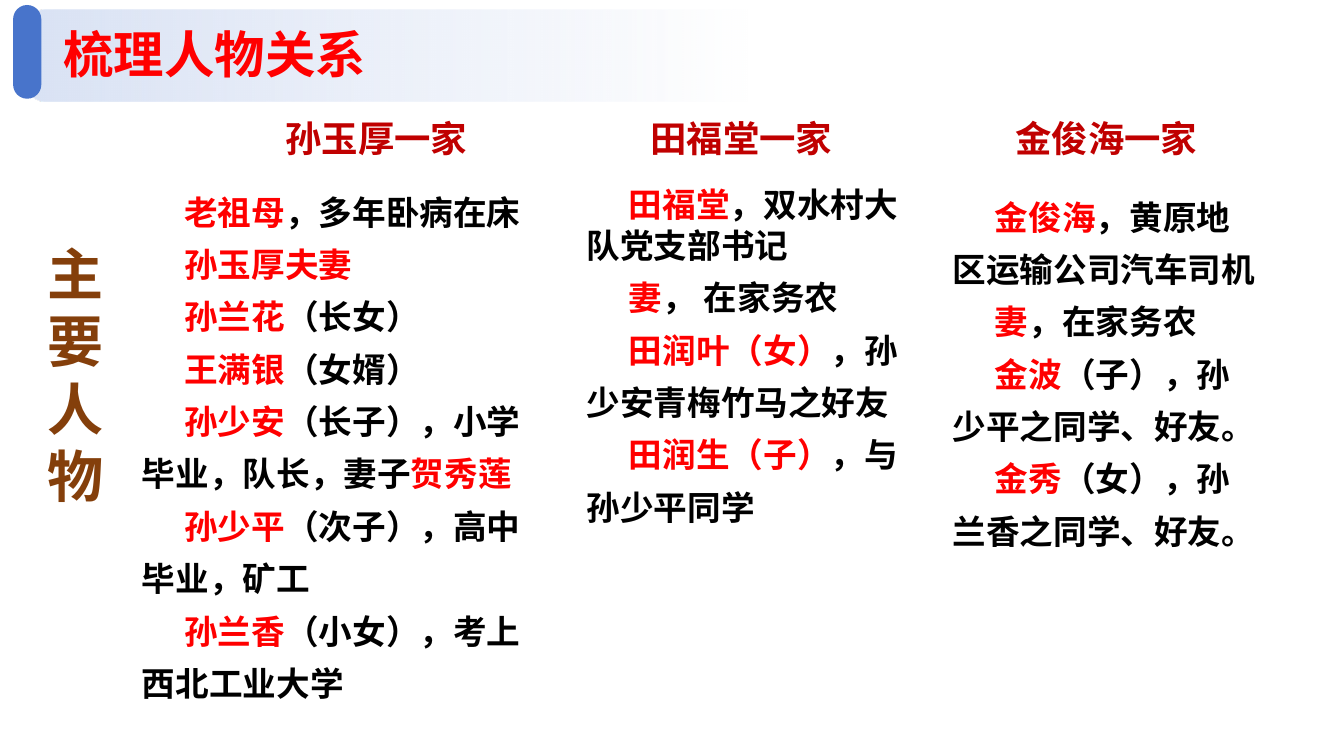
import pptx
import pptx.util
import pptx.dml.color
import pptx.enum.shapes
import pptx.enum.text
import pptx.oxml.ns
import lxml.etree

Inches = pptx.util.Inches
FONT = "Noto Sans CJK SC"
RED, BLACK = "FF0000", "000000"


def paint(color_format, value):
    color_format.rgb = pptx.dml.color.RGBColor.from_string(value)


def add_run(p, text, size=24, color=BLACK):
    r = p.add_run()
    r.text = text
    r.font.size = pptx.util.Pt(size)
    r.font.bold = True
    r.font.name = FONT
    paint(r.font.fill.fore_color if r.font.fill.solid() else r.font.color, color)
    ea = lxml.etree.SubElement(r.font._element, pptx.oxml.ns.qn("a:ea"))
    ea.set("typeface", FONT)


prs = pptx.Presentation()
prs.slide_width = Inches(13.33)
prs.slide_height = Inches(7.5)
slide = prs.slides.add_slide(prs.slide_layouts[6])
shapes = slide.shapes
SHAPE = pptx.enum.shapes.MSO_SHAPE

families = [
    ("孙玉厚一家", (1.31, 1.73, 4.09, 5.35), 1.3, [
        ["老祖母", "，多年卧病在床"],
        ["孙玉厚夫妻"],
        ["孙兰花", "（长女）"],
        ["王满银", "（女婿）"],
        ["孙少安", "（长子），小学毕业，队长，妻子", "贺秀莲"],
        ["孙少平", "（次子），高中毕业，矿工"],
        ["孙兰香", "（小女），考上西北工业大学"],
    ]),
    ("田福堂一家", (5.72, 1.78, 3.3, 3.53), 1.0, [
        ["田福堂", "，双水村大队党支部书记"],
        ["妻", "， 在家务农"],
        ["田润叶（女）", "，孙少安青梅竹马之好友"],
        ["田润生（子）", "，与孙少平同学"],
    ]),
    ("金俊海一家", (9.35, 1.78, 3.25, 4.42), 1.3, [
        ["金俊海", "，黄原地区运输公司汽车司机"],
        ["妻", "，在家务农"],
        ["金波", "（子），孙少平之同学、好友。"],
        ["金秀", "（女），孙兰香之同学、好友。"],
    ]),
]

for i, (family, box, first_spacing, members) in enumerate(families):
    sp = shapes.add_shape(SHAPE.RECTANGLE, *map(Inches, box))
    sp.shadow.inherit = False
    sp.fill.solid()
    paint(sp.fill.fore_color, "FFFFFF")
    sp.line.fill.background()
    tf = sp.text_frame
    tf.word_wrap = True
    tf.vertical_anchor = pptx.enum.text.MSO_ANCHOR.TOP
    for j, member in enumerate(members):
        p = tf.add_paragraph() if j else tf.paragraphs[0]
        p.alignment = pptx.enum.text.PP_ALIGN.LEFT
        p.line_spacing = 1.3 if j else first_spacing
        p._p.get_or_add_pPr().set("marL", "0")
        p._p.get_or_add_pPr().set("indent", str(Inches(0.42)))
        for k, text in enumerate(member):
            add_run(p, text, color=BLACK if k % 2 else RED)

    heading = shapes.add_textbox(Inches(2.73 + 3.62 * i), Inches(1.1), Inches(2.18), Inches(0.54))
    heading.text_frame.word_wrap = True
    add_run(heading.text_frame.paragraphs[0], family, size=26, color="C00000")

side = shapes.add_textbox(Inches(0.37), Inches(2.33), Inches(0.84), Inches(2.79))
side.text_frame.word_wrap = True
add_run(side.text_frame.paragraphs[0], "主要人物", size=40, color="843F0B")

banner = shapes.add_shape(SHAPE.ROUNDED_RECTANGLE, Inches(0.27), Inches(0.1), Inches(8.94), Inches(0.91))
banner.adjustments[0] = 0.2
banner.fill.gradient()
banner.fill.gradient_angle = 0
for stop, position in zip(banner.fill.gradient_stops, (0, 0.8)):
    paint(stop.color, "DAE3F5")
    stop.position = position
last_color = banner._element.xpath(".//a:gs/a:srgbClr")[-1]
lxml.etree.SubElement(last_color, pptx.oxml.ns.qn("a:alpha")).set("val", "0")

title = shapes.add_textbox(Inches(0.63), Inches(0.27), Inches(6.67), Inches(0.51))
tf = title.text_frame
tf.word_wrap = True
tf.vertical_anchor = pptx.enum.text.MSO_ANCHOR.MIDDLE
tf.margin_left = tf.margin_right = tf.margin_top = tf.margin_bottom = 0
add_run(tf.paragraphs[0], "梳理人物关系", size=36, color=RED)

tab = shapes.add_shape(SHAPE.ROUNDED_RECTANGLE, Inches(0.13), Inches(0.05), Inches(0.28), Inches(0.93))
tab.adjustments[0] = 0.5
tab.fill.solid()
paint(tab.fill.fore_color, "4874CB")

for sp in (banner, tab):
    sp.shadow.inherit = False
    sp.line.fill.background()

prs.save("out.pptx")
